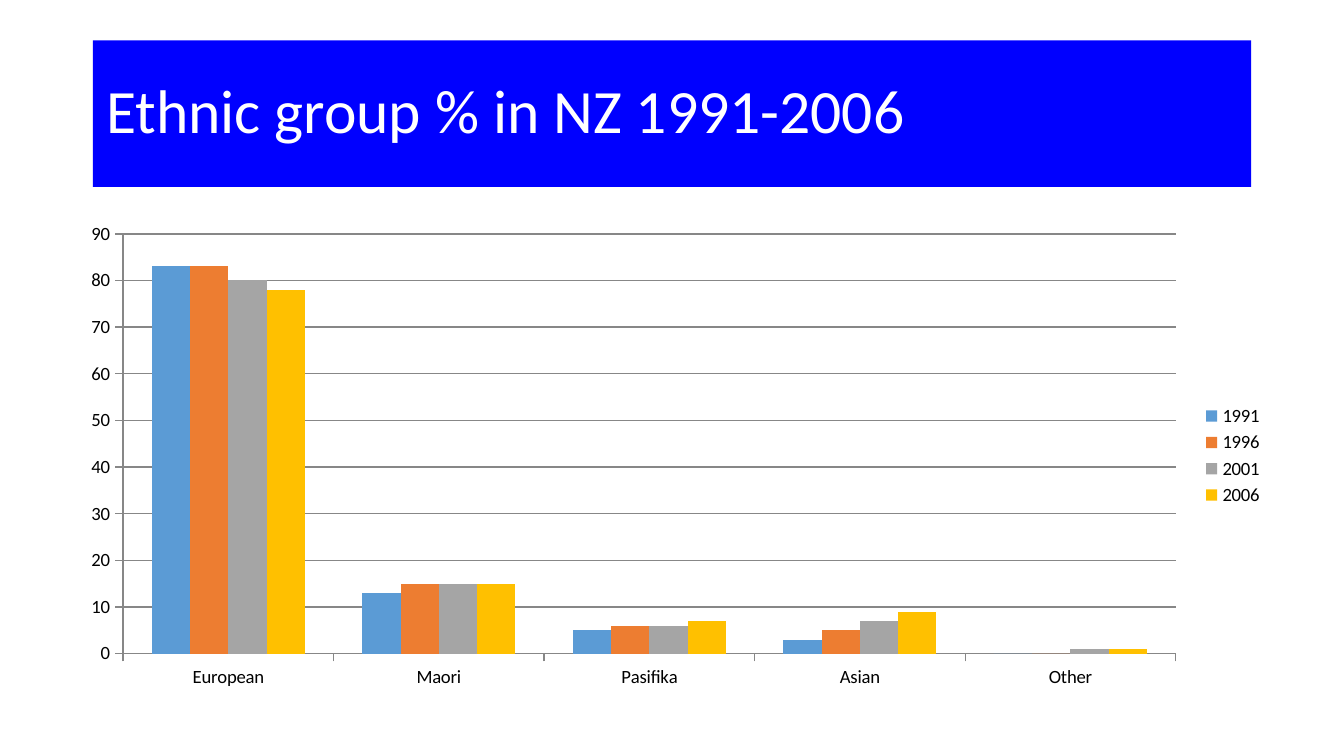
import pptx
import pptx.chart.data
import pptx.dml.color
import pptx.enum.chart
import pptx.enum.text
import pptx.util

Inches = pptx.util.Inches
Pt = pptx.util.Pt

TITLE = "Ethnic group % in NZ 1991-2006"
GROUPS = ["European", "Maori", "Pasifika", "Asian", "Other"]
SHARES = {
    "1991": (83, 13, 5, 3, 0),
    "1996": (83, 15, 6, 5, 0),
    "2001": (80, 15, 6, 7, 1),
    "2006": (78, 15, 7, 9, 1),
}
COLOURS = {
    "banner": "0000FF",
    "title": "FFFFFF",
    "text": "000000",
    "line": "878787",
    "1991": "5B9BD5",
    "1996": "ED7D31",
    "2001": "A5A5A5",
    "2006": "FFC000",
}
FONT = "Calibri"
SLIDE_WIDTH = 10
SLIDE_HEIGHT = SLIDE_WIDTH * 9 / 16
TITLE_BOX = (0.69, 0.3, 8.62, 1.09)
CHART_BOX = (0.5, 1.59, 9, 3.6)


def colour(name):
    return pptx.dml.color.RGBColor.from_string(COLOURS[name])


def set_values(target, values):
    for name, value in values.items():
        setattr(target, name, value)


def paint(fill, name):
    fill.solid()
    fill.fore_color.rgb = colour(name)


def format_font(font, size, name):
    set_values(font, {"name": FONT, "size": Pt(size), "bold": False})
    font.color.rgb = colour(name)


def add_title(slide):
    title = slide.shapes.title
    sides = ("left", "top", "width", "height")
    set_values(title, dict(zip(sides, map(Inches, TITLE_BOX))))
    paint(title.fill, "banner")
    frame = title.text_frame
    set_values(frame, {
        "text": TITLE,
        "word_wrap": True,
        "auto_size": pptx.enum.text.MSO_AUTO_SIZE.NONE,
        "vertical_anchor": pptx.enum.text.MSO_ANCHOR.MIDDLE,
        "margin_left": Inches(0.1),
        "margin_right": Inches(0.1),
        "margin_top": Inches(0.05),
        "margin_bottom": Inches(0.05),
    })
    para = frame.paragraphs[0]
    set_values(para, {"alignment": pptx.enum.text.PP_ALIGN.LEFT, "line_spacing": 0.9})
    format_font(para.runs[0].font, 33, "title")


def add_share_chart(slide):
    data = pptx.chart.data.CategoryChartData()
    data.categories = GROUPS
    for year, shares in SHARES.items():
        data.add_series(year, shares)
    chart = slide.shapes.add_chart(
        pptx.enum.chart.XL_CHART_TYPE.COLUMN_CLUSTERED, *map(Inches, CHART_BOX), data
    ).chart
    set_values(chart, {"has_title": False, "has_legend": True})
    format_font(chart.font, 10, "text")
    set_values(chart.legend, {
        "position": pptx.enum.chart.XL_LEGEND_POSITION.RIGHT,
        "include_in_layout": False,
    })
    value_axis = chart.value_axis
    set_values(value_axis, {
        "minimum_scale": 0,
        "maximum_scale": 90,
        "major_unit": 10,
        "has_major_gridlines": True,
    })
    for axis in (chart.category_axis, value_axis):
        axis.major_tick_mark = pptx.enum.chart.XL_TICK_MARK.OUTSIDE
    for ruled in (chart.category_axis, value_axis, value_axis.major_gridlines):
        ruled.format.line.color.rgb = colour("line")
    plot = chart.plots[0]
    set_values(plot, {"gap_width": 150, "overlap": 0, "vary_by_categories": False})
    for series in plot.series:
        paint(series.format.fill, series.name)


def main():
    deck = pptx.Presentation()
    set_values(deck, {
        "slide_width": Inches(SLIDE_WIDTH),
        "slide_height": Inches(SLIDE_HEIGHT),
    })
    slide = deck.slides.add_slide(deck.slide_layouts.get_by_name("Title Only"))
    add_title(slide)
    add_share_chart(slide)
    deck.save("out.pptx")


if __name__ == "__main__":
    main()
